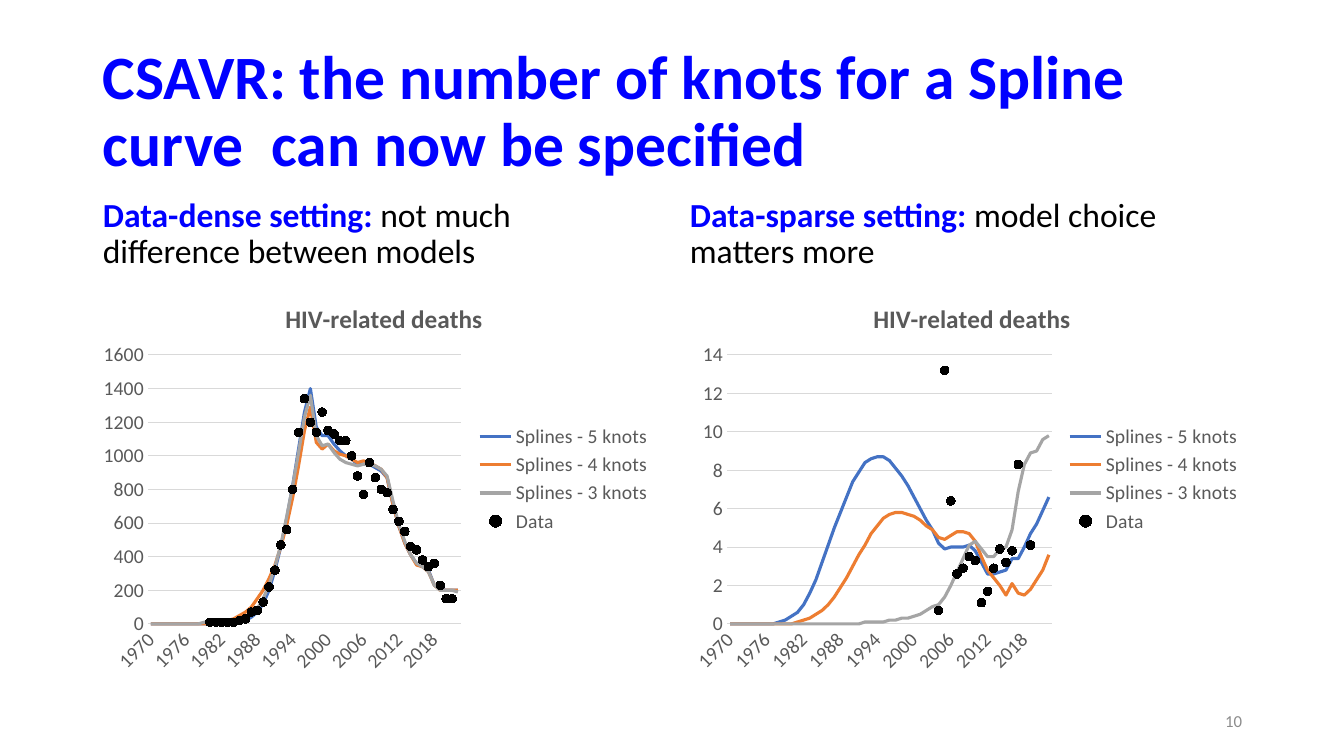
import lxml.etree
import pptx
import pptx.chart.data
import pptx.dml.color
import pptx.enum.chart
import pptx.enum.text
import pptx.oxml.ns
import pptx.util

RGB = pptx.dml.color.RGBColor
ANCHOR = pptx.enum.text.MSO_ANCHOR
ALIGN = pptx.enum.text.PP_ALIGN
ENUM = pptx.enum.chart
qn = pptx.oxml.ns.qn

BLUE = RGB(0x00, 0x00, 0xFF)
BLACK = RGB(0x00, 0x00, 0x00)
GRAY = RGB(0x59, 0x59, 0x59)
PALE = RGB(0xD9, 0xD9, 0xD9)
PAGE = RGB(0x8C, 0x8C, 0x8C)
LINES = [RGB(0x44, 0x72, 0xC4), RGB(0xED, 0x7D, 0x31), RGB(0xA5, 0xA5, 0xA5)]

FACE = "Calibri"
SCALE = 914400 / 100.8
YEARS = [str(year) for year in range(1970, 2023)]
NAMES = ["Splines - 5 knots", "Splines - 4 knots", "Splines - 3 knots", "Data"]

DENSE = [
    [0] * 14 + [10, 10, 20, 40, 70, 120, 200, 320, 460, 630, 820, 1040, 1260,
                1400, 1170, 1120, 1120, 1070, 1030, 1000, 980, 950, 950, 950,
                930, 910, 870, 710, 580, 480, 410, 360, 340, 320, 230, 210,
                200, 200, 200],
    [0] * 11 + [10, 10, 20, 30, 50, 70, 100, 150, 200, 270, 350, 460, 590, 750,
                940, 1150, 1290, 1080, 1040, 1070, 1030, 1010, 1000, 980, 960,
                970, 960, 940, 920, 870, 710, 580, 480, 410, 350, 340, 310,
                230, 200, 200, 200, 200],
    [0] * 9 + [10, 10, 10, 10, 10, 10, 20, 30, 60, 90, 150, 230, 340, 470, 640,
               820, 1020, 1230, 1360, 1120, 1060, 1070, 1020, 980, 960, 950,
               940, 950, 950, 940, 920, 880, 730, 590, 490, 410, 360, 340, 310,
               230, 200, 200, 200, 190],
    [None] * 10 + [10, 10, 10, 10, 10, 20, 30, 70, 80, 130, 220, 320, 470, 560,
                   800, 1140, 1340, 1200, 1140, 1260, 1150, 1130, 1090, 1090,
                   1000, 880, 770, 960, 870, 800, 780, 680, 610, 550, 460, 440,
                   380, 340, 360, 230, 150, 150, None],
]
SPARSE = [
    [0] * 8 + [0.1, 0.2, 0.4, 0.6, 1, 1.6, 2.3, 3.2, 4.1, 5, 5.8, 6.6, 7.4,
               7.9, 8.4, 8.6, 8.7, 8.7, 8.5, 8.1, 7.7, 7.2, 6.6, 6, 5.4, 4.9,
               4.2, 3.9, 4, 4, 4, 4.1, 3.8, 3.2, 2.6, 2.6, 2.7, 2.8, 3.4, 3.4,
               4, 4.7, 5.2, 5.9, 6.6],
    [0] * 11 + [0.1, 0.2, 0.3, 0.5, 0.7, 1, 1.4, 1.9, 2.4, 3, 3.6, 4.1, 4.7,
                5.1, 5.5, 5.7, 5.8, 5.8, 5.7, 5.6, 5.4, 5.1, 4.9, 4.5, 4.4,
                4.6, 4.8, 4.8, 4.7, 4.3, 3.5, 2.8, 2.4, 2, 1.5, 2.1, 1.6, 1.5,
                1.8, 2.3, 2.8, 3.6],
    [0] * 22 + [0.1, 0.1, 0.1, 0.1, 0.2, 0.2, 0.3, 0.3, 0.4, 0.5, 0.7, 0.9, 1,
                1.4, 2, 2.7, 3.4, 4.1, 4.3, 3.9, 3.5, 3.5, 3.9, 4, 4.9, 6.9,
                8.3, 8.9, 9, 9.6, 9.8],
    [None] * 34 + [0.7, 13.2, 6.4, 2.6, 2.9, 3.5, 3.3, 1.1, 1.7, 2.9, 3.9, 3.2,
                   3.8, 8.3, None, 4.1, None, None, None],
]


def px(*nums):
    return [round(num * SCALE) for num in nums]


def put(item, **vals):
    """Set every given format value on the item."""
    for name, val in vals.items():
        setattr(item, name, val)


def style(font, size, color, bold=False):
    put(font, name=FACE, size=pptx.util.Pt(size), bold=bold)
    font.color.rgb = color


def stroke(line, color, width):
    line.color.rgb = color
    line.width = pptx.util.Pt(width)


def add_text(slide, box, runs, size, anchor, **para):
    """Add a one-paragraph text box; runs hold (text, color, bold)."""
    frame = slide.shapes.add_textbox(*px(*box)).text_frame
    put(frame, word_wrap=True, vertical_anchor=anchor)
    put(frame.paragraphs[0], **para)
    for text, color, bold in runs:
        run = frame.paragraphs[0].add_run()
        run.text = text
        style(run.font, size, color, bold)


def place(node, index, **vals):
    """Give a chart part a manual layout as shares of the chart."""
    for old in node.findall(qn("c:layout")):
        node.remove(old)
    layout = lxml.etree.Element(qn("c:layout"))
    manual = lxml.etree.SubElement(layout, qn("c:manualLayout"))
    for tag, val in vals.items():
        lxml.etree.SubElement(manual, qn("c:" + tag)).set("val", str(val))
    node.insert(index, layout)


def set_axes(chart, top, step):
    years, deaths = chart.category_axis, chart.value_axis
    for axis in (years, deaths):
        put(axis, major_tick_mark=ENUM.XL_TICK_MARK.NONE,
            minor_tick_mark=ENUM.XL_TICK_MARK.NONE)
        style(axis.tick_labels.font, 14, GRAY)
    put(years, has_major_gridlines=False)
    put(deaths, minimum_scale=0, maximum_scale=top, major_unit=step,
        has_major_gridlines=True)
    put(deaths.tick_labels, number_format="General",
        number_format_is_linked=False)
    stroke(years.format.line, PALE, 0.75)
    stroke(deaths.major_gridlines.format.line, PALE, 0.75)
    deaths.format.line.fill.background()

    node = years._element
    node.find(qn("c:txPr")).find(qn("a:bodyPr")).set("rot", "-2700000")
    skip = lxml.etree.Element(qn("c:tickLblSkip"))
    skip.set("val", "6")
    node.find(qn("c:noMultiLvlLbl")).addprevious(skip)


def set_series(plot):
    *curves, dots = plot.series
    for curve, color in zip(curves, LINES):
        curve.smooth = False
        stroke(curve.format.line, color, 2.25)
        curve.marker.style = ENUM.XL_MARKER_STYLE.NONE
    dots.smooth = False
    dots.format.line.fill.background()
    put(dots.marker, style=ENUM.XL_MARKER_STYLE.CIRCLE, size=6)
    dots.marker.format.fill.solid()
    dots.marker.format.fill.fore_color.rgb = BLACK
    stroke(dots.marker.format.line, BLACK, 0.75)


def add_chart(slide, box, rows, top, step, inner):
    """Add a line chart; inner is the plot's left and right edge in px."""
    data = pptx.chart.data.CategoryChartData()
    data.categories = YEARS
    for name, row in zip(NAMES, rows):
        data.add_series(name, row)
    chart = slide.shapes.add_chart(
        ENUM.XL_CHART_TYPE.LINE_MARKERS, *px(*box), data).chart
    style(chart.font, 14, BLACK)
    put(chart, has_title=True, has_legend=True)

    run = chart.chart_title.text_frame.paragraphs[0].add_run()
    run.text = "HIV-related deaths"
    style(run.font, 18, GRAY, True)
    place(chart.chart_title._element, 1, xMode="edge", yMode="edge",
          x=0.33, y=0.05)

    put(chart.legend, position=ENUM.XL_LEGEND_POSITION.RIGHT,
        include_in_layout=False)
    style(chart.legend.font, 14, GRAY)
    chart.plots[0].vary_by_categories = False
    set_axes(chart, top, step)
    set_series(chart.plots[0])

    left, y, wide, high = box
    start, end = inner
    area = chart._chartSpace.chart.plotArea
    place(area, 0, layoutTarget="inner", xMode="edge", yMode="edge",
          x=round((start - left) / wide, 4), y=round((355 - y) / high, 4),
          w=round((end - start) / wide, 4), h=round(269 / high, 4))


def main():
    deck = pptx.Presentation()
    wide, high = px(1344, 756)
    put(deck, slide_width=wide, slide_height=high)
    slide = deck.slides.add_slide(deck.slide_layouts[6])

    title = "CSAVR: the number of knots for a Spline curve  can now be specified"
    add_text(slide, (93, 40, 1159, 146), [(title, BLUE, True)], 44,
             ANCHOR.MIDDLE, line_spacing=0.9)
    sides = [
        (93, 569, "Data-dense setting: ", "not much difference between models",
         DENSE, 1600, 200, (148, 461)),
        (680, 572, "Data-sparse setting: ", "model choice matters more",
         SPARSE, 14, 2, (727, 1052)),
    ]
    for left, wide, head, note, rows, top, step, inner in sides:
        add_text(slide, (left, 185, wide, 91),
                 [(head, BLUE, True), (note, BLACK, False)], 24,
                 ANCHOR.BOTTOM, line_spacing=0.9,
                 space_before=pptx.util.Pt(10))
        add_chart(slide, (left, 276, wide, 406), rows, top, step, inner)
    add_text(slide, (950, 701, 302, 40), [("10", PAGE, False)], 12,
             ANCHOR.MIDDLE, alignment=ALIGN.RIGHT)
    deck.save("out.pptx")


if __name__ == "__main__":
    main()
